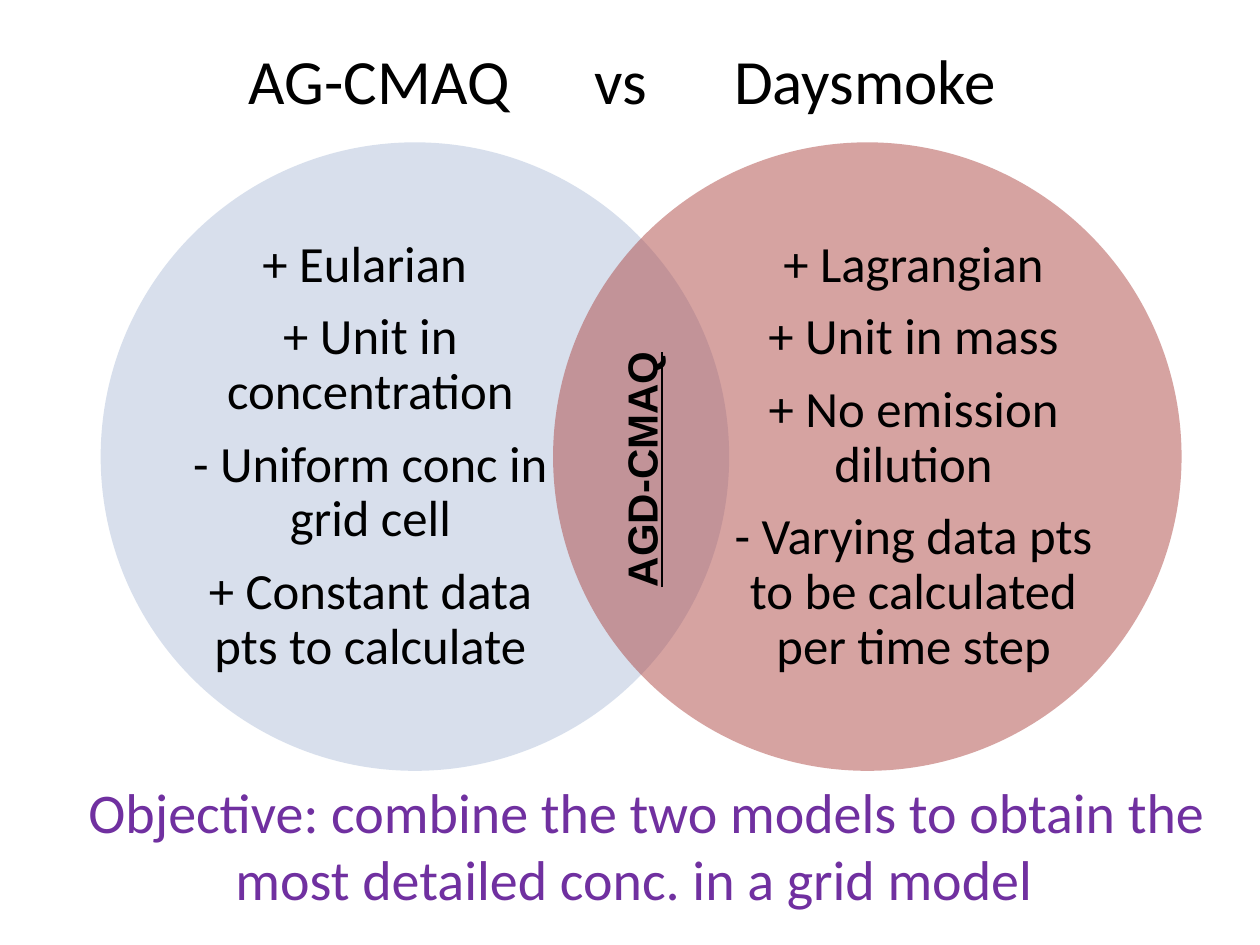
from dataclasses import dataclass
from typing import Optional

from lxml.etree import SubElement
from pptx import Presentation
from pptx.dml.color import RGBColor
from pptx.enum.shapes import MSO_SHAPE
from pptx.enum.text import MSO_ANCHOR, PP_ALIGN
from pptx.oxml.ns import qn
from pptx.util import Cm, Pt

COLORS = {"text": "000000", "objective": "7030A0", "left": "B2C1DB", "right": "AE4845"}
CIRCLE_SIZE = 12.67
CIRCLE_TOP = 2.87
LIST_OFFSETS = {"left": 1.78, "right": 3.61}


@dataclass
class Model:
    side: str
    left: float
    points: list[str]


@dataclass
class Label:
    text: str
    left: float
    top: float
    width: float
    height: float
    size: float
    color: str = "text"
    font: str = "Calibri"
    align: PP_ALIGN = PP_ALIGN.CENTER
    inset: Optional[float] = None
    rotation: float = 0
    emphasis: bool = False
    line_spacing: float = 1.0
    space_after: float = 0
    tabs: tuple[float, ...] = ()


def draw_circle(s, model: Model) -> None:
    sp = s.shapes.add_shape(MSO_SHAPE.OVAL, Cm(model.left), Cm(CIRCLE_TOP),
                            Cm(CIRCLE_SIZE), Cm(CIRCLE_SIZE))
    sp.shadow.inherit = False
    sp.line.fill.background()
    sp.fill.solid()
    sp.fill.fore_color.rgb = RGBColor.from_string(COLORS[model.side])
    color = next(sp.element.spPr.iter(qn("a:srgbClr")))
    SubElement(color, qn("a:alpha")).set("val", "50000")


def add_tabs(p, tabs: tuple[float, ...]) -> None:
    tab_list = SubElement(p._p.get_or_add_pPr(), qn("a:tabLst"))
    for position in tabs:
        SubElement(tab_list, qn("a:tab"), pos=str(Cm(position)), algn="l")


def draw_label(s, label: Label) -> None:
    sp = s.shapes.add_textbox(Cm(label.left), Cm(label.top), Cm(label.width), Cm(label.height))
    sp.rotation = label.rotation
    tf = sp.text_frame
    tf.word_wrap = True
    tf.vertical_anchor = MSO_ANCHOR.MIDDLE
    if label.inset is not None:
        tf.margin_left = tf.margin_right = tf.margin_top = tf.margin_bottom = Cm(label.inset)
    tf.text = label.text
    for p in tf.paragraphs:
        p.alignment = label.align
        p.line_spacing = label.line_spacing
        p.space_after = Pt(label.space_after)
        if label.tabs:
            add_tabs(p, label.tabs)
        for r in p.runs:
            r.font.name = label.font
            r.font.size = Pt(label.size)
            r.font.bold = r.font.underline = label.emphasis
            r.font.color.rgb = RGBColor.from_string(COLORS[label.color])


def draw_model(s, model: Model) -> None:
    draw_circle(s, model)
    draw_label(s, Label("\n".join(model.points), model.left + LIST_OFFSETS[model.side], 4.37,
                        7.32, 9.68, 29, inset=0, line_spacing=0.9, space_after=10.15))


MODELS = [
    Model("left", 2.03, ["+ Eularian ", "+ Unit in concentration", "- Uniform conc in grid cell",
                         "+ Constant data pts to calculate"]),
    Model("right", 11.15, ["+ Lagrangian", "+ Unit in mass", "+ No emission dilution",
                           "- Varying data pts to be calculated per time step"]),
]

LABELS = [
    Label("AG-CMAQ\tvs\tDaysmoke", 4.77, 0, 18, 3.18, 36, align=PP_ALIGN.LEFT,
          tabs=(6.96, 9.78)),
    Label("AGD-CMAQ", 10.06, 8.59, 5.72, 1.27, 24, font="Arial", align=PP_ALIGN.LEFT,
          rotation=270, emphasis=True),
    Label(" Objective: combine the two models to obtain the most detailed conc. in a grid model ",
          1.27, 15.44, 23.29, 3.18, 32, color="objective"),
]


def main() -> None:
    prs = Presentation()
    prs.slide_width, prs.slide_height = Cm(25.4), Cm(19.05)
    s = prs.slides.add_slide(prs.slide_layouts[6])
    for model in MODELS:
        draw_model(s, model)
    for label in LABELS:
        draw_label(s, label)
    prs.save("out.pptx")


if __name__ == "__main__":
    main()
